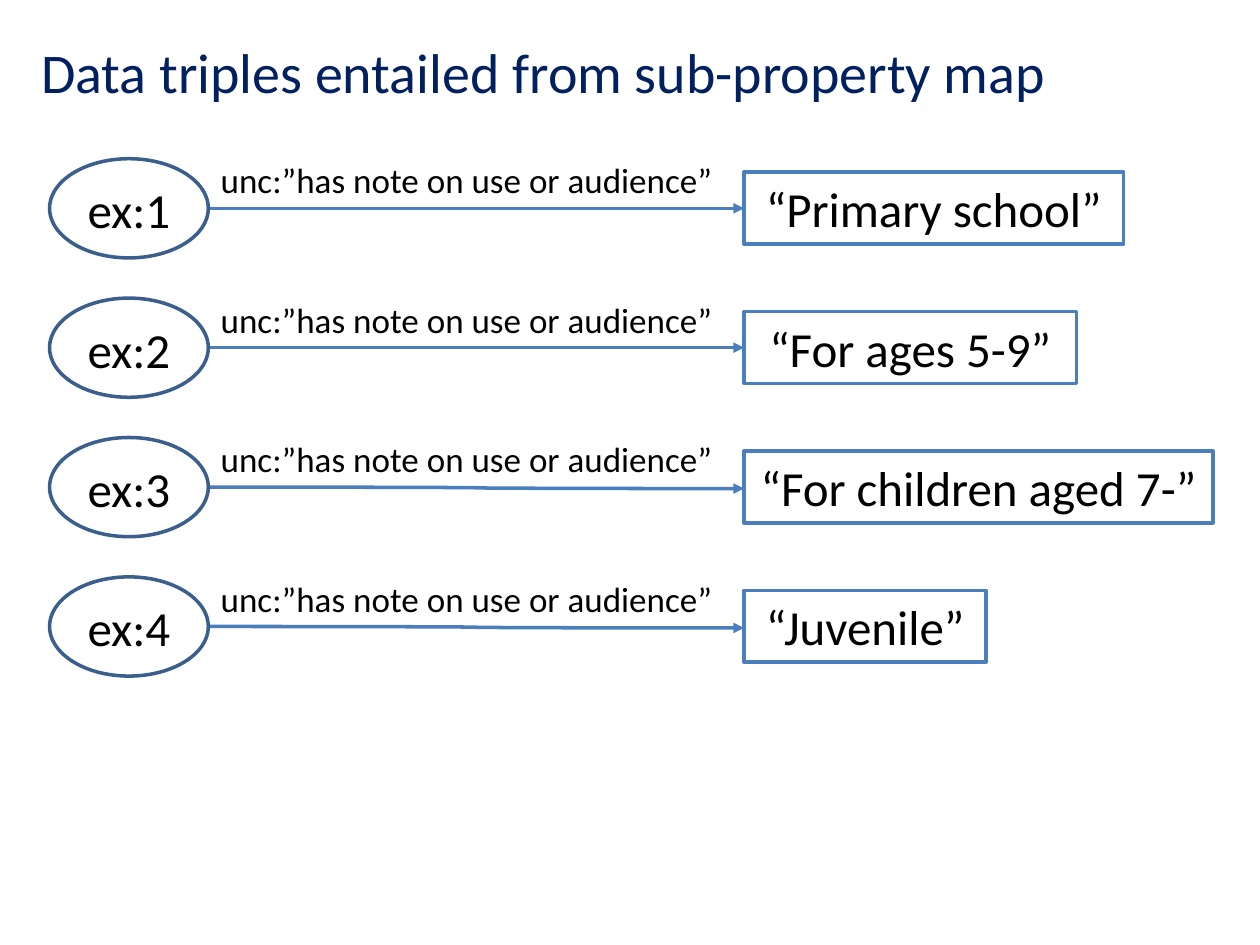
from pptx import Presentation
from pptx.dml.color import RGBColor
from pptx.enum import shapes, text
from pptx.oxml.ns import qn
from pptx.util import Cm, Pt
from lxml import etree

NAVY = RGBColor(0x00, 0x20, 0x60)
BLUE = RGBColor(0x4B, 0x7E, 0xBC)
DARK_BLUE = RGBColor(0x3A, 0x5F, 0x8C)
BLACK = RGBColor(0, 0, 0)
WHITE = RGBColor(255, 255, 255)


def write(sp, words, size, color=BLACK, align=text.PP_ALIGN.LEFT, wrap=True):
    tf = sp.text_frame
    tf.word_wrap = wrap
    tf.auto_size = text.MSO_AUTO_SIZE.SHAPE_TO_FIT_TEXT
    tf.text = words
    p = tf.paragraphs[0]
    p.alignment = align
    f = p.runs[0].font
    f.name, f.size, f.color.rgb = "Calibri", Pt(size), color


def outline(sp, color):
    sp.shadow.inherit = False
    sp.line.color.rgb = color
    sp.line.width = Pt(2)


prs = Presentation()
prs.slide_width, prs.slide_height = Cm(25.4), Cm(19.05)
s = prs.slides.add_slide(prs.slide_layouts[6])

# Title
sp = s.shapes.add_textbox(Cm(0.58), Cm(0.64), Cm(20.98), Cm(1.62))
write(sp, "Data triples entailed from sub-property map", 32, NAVY, wrap=False)

# One triple per row: value, width of its box, drop of the arrow
triples = [
    ("“Primary school”", 7.65, 0),
    ("“For ages 5-9”", 6.7, 0),
    ("“For children aged 7-”", 9.45, 0.03),
    ("“Juvenile”", 4.88, 0.03),
]
LEFT, OVAL_W, OVAL_H, BOX_LEFT = 1, 3.2, 2, 15
START = LEFT + OVAL_W

for i, (value, width, drop) in enumerate(triples):
    top = 3.2 + 2.81 * i
    mid = top + OVAL_H / 2
    g = s.shapes.add_group_shape().shapes

    # Arrow
    c = g.add_connector(shapes.MSO_CONNECTOR.CURVE, Cm(START), Cm(mid),
                        Cm(BOX_LEFT), Cm(mid + drop))
    c.line.color.rgb = BLUE
    c.line.width = Pt(2)
    etree.SubElement(c.line._get_or_add_ln(), qn("a:tailEnd"), type="triangle")
    etree.SubElement(c._element.spPr, qn("a:effectLst"))

    # Value
    sp = g.add_shape(shapes.MSO_SHAPE.RECTANGLE, Cm(BOX_LEFT), Cm(top + 0.27),
                     Cm(width), Cm(1.45))
    sp.fill.background()
    outline(sp, BLUE)
    write(sp, value, 28, align=text.PP_ALIGN.CENTER)

    # Subject
    sp = g.add_shape(shapes.MSO_SHAPE.OVAL, Cm(LEFT), Cm(top), Cm(OVAL_W), Cm(OVAL_H))
    sp.fill.solid()
    sp.fill.fore_color.rgb = WHITE
    outline(sp, DARK_BLUE)
    sp = g.add_textbox(Cm(LEFT), Cm(top + 0.3), Cm(OVAL_W), Cm(1.45))
    write(sp, f"ex:{i + 1}", 28, align=text.PP_ALIGN.CENTER)

    # Property
    sp = g.add_textbox(Cm(START), Cm(top - 0.12), Cm(BOX_LEFT - START), Cm(1.11))
    write(sp, "unc:”has note on use or audience”", 20)

prs.save("out.pptx")
